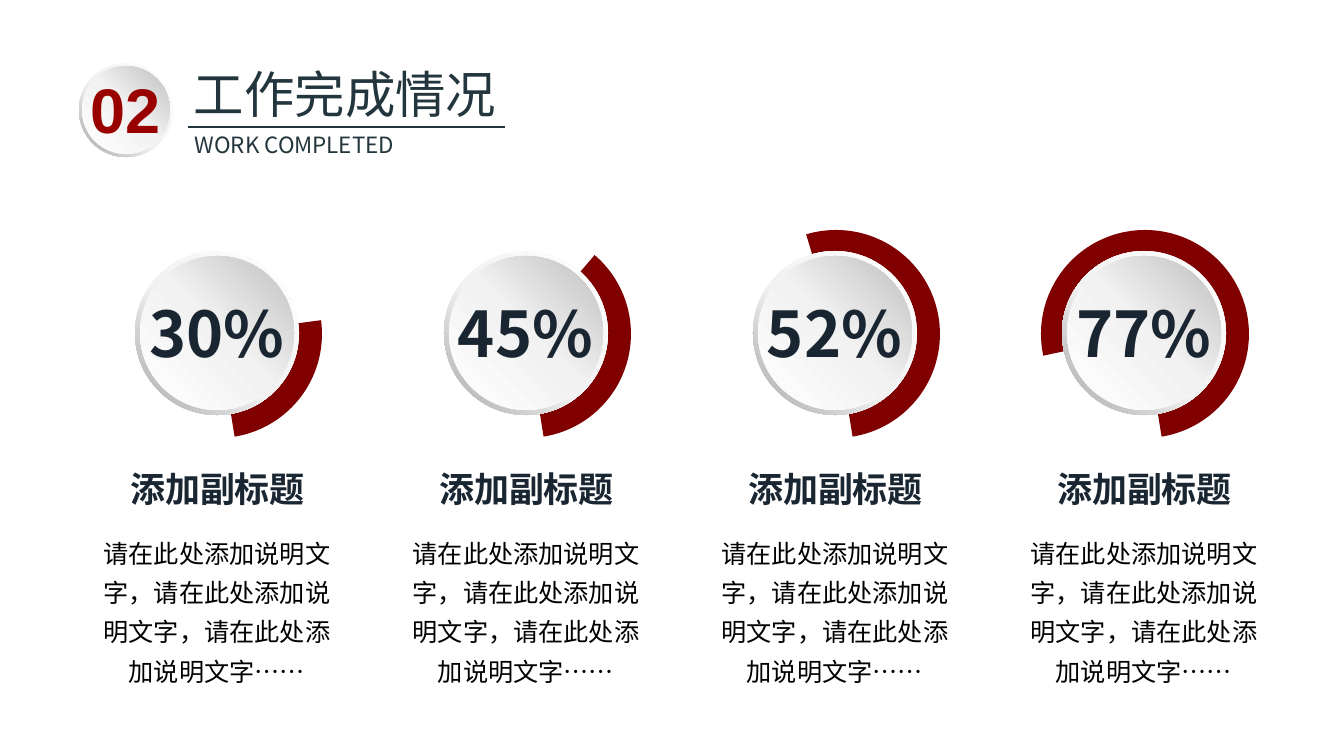
import copy

import lxml.etree
import pptx
import pptx.dml.color
import pptx.enum.shapes
import pptx.enum.text
import pptx.oxml.ns
import pptx.util

PX = 914400 / 100.8
FONT = "Noto Sans CJK SC"
SHAPE = pptx.enum.shapes.MSO_SHAPE
ALIGN = pptx.enum.text.PP_ALIGN
COLORS = {
    "title": "23353D",
    "arc": "800000",
    "number": "990000",
    "percent": "192530",
    "subtitle": "1A2732",
    "body": "000000",
}
RING_STOPS = [(0, "FFFFFF"), (0.55, "F2F2F2"), (1, "A6A6A6")]
FACE_STOPS = [(0, "FFFFFF"), (0.51, "F2F2F2"), (1, "BFBFBF")]
SUBTITLE = "添加副标题"
BODY = "请在此处添加说明文字，请在此处添加说明文字，请在此处添加说明文字……"
ITEMS = [("30%", 352.37), ("45%", 310.6), ("52%", 253.35), ("77%", 167.97)]
ARC_END = 80.79


def px(*lengths):
    """Turn pixel lengths into EMU."""
    return [pptx.util.Emu(round(n * PX)) for n in lengths]


def rgb(value):
    """Return a colour from its hex string."""
    return pptx.dml.color.RGBColor.from_string(value)


def add_text(shapes, box, text, size, color, font=FONT, bold=False, align=ALIGN.LEFT,
             wrap=True, margins=(10, 5), spacing=None):
    """Add a one-paragraph text box."""
    sp = shapes.add_textbox(*px(*box))
    tf = sp.text_frame
    tf.word_wrap = wrap
    tf.auto_size = pptx.enum.text.MSO_AUTO_SIZE.SHAPE_TO_FIT_TEXT
    tf.margin_left, tf.margin_top = tf.margin_right, tf.margin_bottom = px(*margins)
    p = tf.paragraphs[0]
    p.text = text
    p.alignment = align
    if spacing:
        p.line_spacing = spacing
    p.font.name = font
    p.font.size = pptx.util.Pt(size)
    p.font.bold = bold
    p.font.color.rgb = rgb(COLORS[color])
    qn = pptx.oxml.ns.qn
    props = p._p.find(".//" + qn("a:defRPr"))
    lxml.etree.SubElement(props, qn("a:ea")).set("typeface", font)


def add_plain_shape(shapes, kind, box):
    """Add a preset shape without line or shadow."""
    sp = shapes.add_shape(kind, *px(*box))
    sp.shadow.inherit = False
    sp.line.fill.background()
    return sp


def fill_gradient(sp, stops, angle):
    """Fill a shape with a three-stop linear gradient."""
    sp.fill.gradient()
    sp.fill.gradient_angle = angle
    stop_list = sp._element.spPr.find(".//" + pptx.oxml.ns.qn("a:gsLst"))
    stop_list.append(copy.deepcopy(stop_list[-1]))
    for stop, (position, color) in zip(sp.fill.gradient_stops, stops):
        stop.position = position
        stop.color.rgb = rgb(color)


def add_disc(shapes, x, y, size, rim):
    """Draw a raised disc: a shaded ring around a shaded face."""
    ring = add_plain_shape(shapes, SHAPE.DONUT, (x, y, size, size))
    ring.adjustments[0] = 0.062
    fill_gradient(ring, RING_STOPS, 225)
    inner = size - 2 * rim
    face = add_plain_shape(shapes, SHAPE.OVAL, (x + rim, y + rim, inner, inner))
    fill_gradient(face, FACE_STOPS, 45)


def add_header(slide, x, y):
    """Place the numbered disc, the title, its rule and the English line."""
    badge = slide.shapes.add_group_shape().shapes
    add_disc(badge, x, y, 94, 3)
    add_text(badge, (x + 1, y + 3, 91, 87), "02", 45, "number", font="Arial",
             bold=True, wrap=False)
    add_text(slide.shapes, (x + 108, y - 4, 321, 69), "工作完成情况", 36, "title",
             wrap=False, margins=(7, 4))
    add_text(slide.shapes, (x + 109, y + 64, 317, 34), "WORK COMPLETED", 16, "title",
             align=ALIGN.JUSTIFY, margins=(7, 4))
    line = slide.shapes.add_connector(pptx.enum.shapes.MSO_CONNECTOR.STRAIGHT,
                                      *px(x + 109, y + 64, x + 426, y + 64))
    line.line.color.rgb = rgb(COLORS["title"])
    line.line.width = pptx.util.Pt(1.75)
    lxml.etree.SubElement(line._element.spPr, pptx.oxml.ns.qn("a:effectLst"))


def add_progress(slide, x, y, width, percent, start):
    """Place one progress dial with its subtitle and description."""
    dial = slide.shapes.add_group_shape().shapes
    arc = add_plain_shape(dial, SHAPE.PIE, (x + 21, y, 208, 208))
    arc.adjustments[0] = start * 0.6
    arc.adjustments[1] = ARC_END * 0.6
    arc.fill.solid()
    arc.fill.fore_color.rgb = rgb(COLORS["arc"])
    add_disc(dial, x + 42, y + 21, 164, 5)
    add_text(dial, (x + 46, y + 60, 158, 87), percent, 45, "percent", bold=True, wrap=False)
    add_text(slide.shapes, (x + 14, y + 238, width - 27, 42), SUBTITLE, 25, "subtitle",
             bold=True, align=ALIGN.CENTER, margins=(0, 0))
    add_text(slide.shapes, (x, y + 294, width, 169), BODY, 18, "body",
             align=ALIGN.CENTER, spacing=1.3)


def main():
    """Build and save the slide."""
    prs = pptx.Presentation()
    prs.slide_width, prs.slide_height = px(1344, 756)
    slide = prs.slides.add_slide(prs.slide_layouts[6])
    for i, (percent, start) in enumerate(ITEMS):
        add_progress(slide, 93 + 309 * i, 230, 248, percent, start)
    add_header(slide, 79, 63)
    prs.save("out.pptx")


if __name__ == "__main__":
    main()
